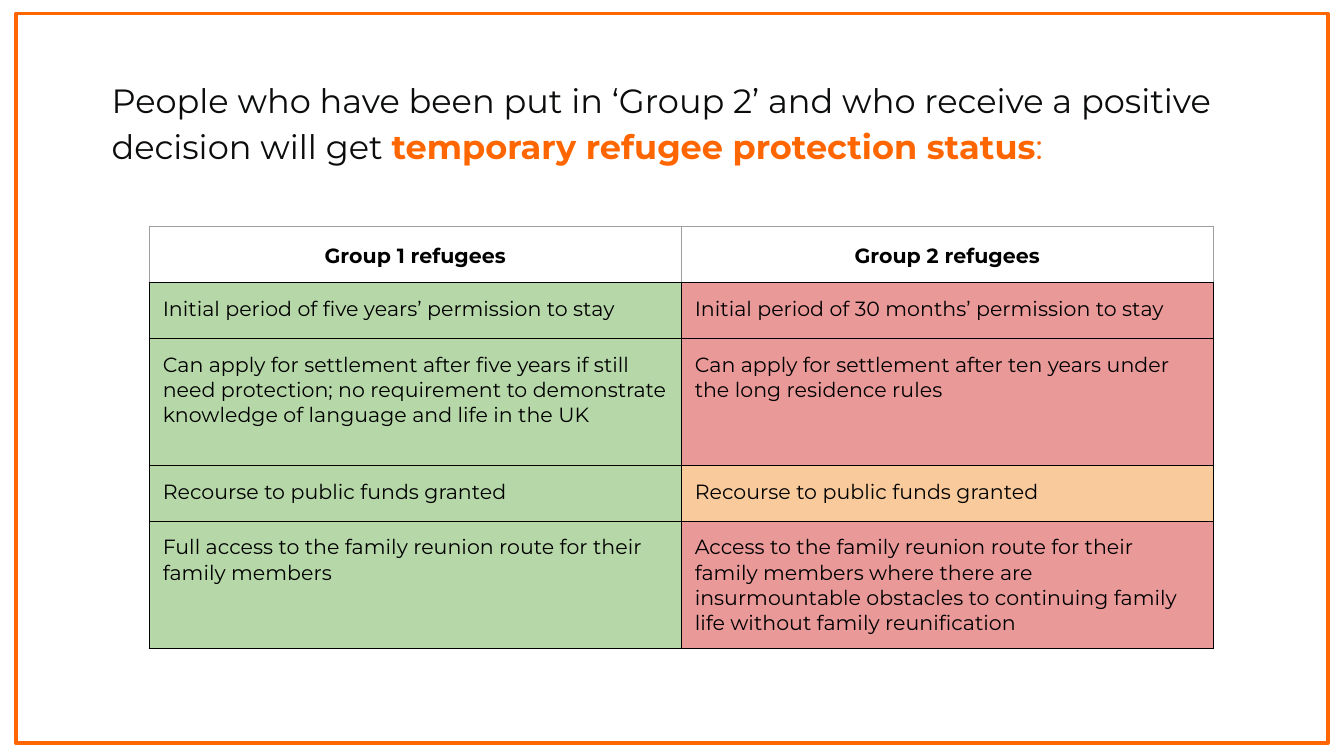
"""Build a slide comparing the entitlements of Group 1 and Group 2 refugees."""
from dataclasses import dataclass

import pptx
import pptx.dml.color
import pptx.enum.shapes
import pptx.enum.text
import pptx.oxml
import pptx.oxml.ns
import pptx.slide
import pptx.table
import pptx.text.text
import pptx.util

Pt = pptx.util.Pt
FONT = "Montserrat"
ORANGE, BLACK, GREY = "FF6600", "000000", "9E9E9E"
GREEN, RED, AMBER = "B6D7A8", "EA9999", "F9CB9C"
INSET = 7.2


@dataclass(frozen=True)
class Entitlement:
    group_1: str
    group_2: str
    height: float
    group_2_fill: str = RED


ENTITLEMENTS = [
    Entitlement("Initial period of five years’ permission to stay",
                "Initial period of 30 months’ permission to stay", 30),
    Entitlement("Can apply for settlement after five years if still need protection; "
                "no requirement to demonstrate knowledge of language and life in the UK",
                "Can apply for settlement after ten years under the long residence rules", 68),
    Entitlement("Recourse to public funds granted",
                "Recourse to public funds granted", 30, AMBER),
    Entitlement("Full access to the family reunion route for their family members",
                "Access to the family reunion route for their family members where there are "
                "insurmountable obstacles to continuing family life without family reunification",
                68),
]


def rgb(color: str) -> pptx.dml.color.RGBColor:
    return pptx.dml.color.RGBColor.from_string(color)


def format_run(r: pptx.text.text._Run, size: float, color: str, bold: bool = False) -> None:
    r.font.name = FONT
    r.font.size = Pt(size)
    r.font.bold = bold
    r.font.color.rgb = rgb(color)


def draw_frame(s: pptx.slide.Slide) -> None:
    sp = s.shapes.add_shape(pptx.enum.shapes.MSO_SHAPE.RECTANGLE,
                            Pt(8.6), Pt(7.2), Pt(702.7), Pt(391))
    sp.shadow.inherit = False
    sp.fill.background()
    sp.line.color.rgb = rgb(ORANGE)
    sp.line.width = Pt(2)


def draw_title(s: pptx.slide.Slide) -> None:
    sp = s.shapes.title
    sp.left, sp.top, sp.width, sp.height = Pt(52.6), Pt(32.4), Pt(608.4), Pt(65)
    tf = sp.text_frame
    tf.word_wrap = True
    tf.auto_size = pptx.enum.text.MSO_AUTO_SIZE.NONE
    tf.vertical_anchor = pptx.enum.text.MSO_ANCHOR.TOP
    tf.margin_left = tf.margin_right = tf.margin_top = tf.margin_bottom = Pt(INSET)
    p = tf.paragraphs[0]
    p.alignment = pptx.enum.text.PP_ALIGN.LEFT
    p.line_spacing = 1.15
    for text, color, bold in [
        ("People who have been put in ‘Group 2’ and who receive a positive decision will get ",
         "0B0C0C", False),
        ("temporary refugee protection status", ORANGE, True),
        (":", ORANGE, False),
    ]:
        r = p.add_run()
        r.text = text
        format_run(r, 18, color, bold)


def set_borders(cell: pptx.table._Cell, color: str) -> None:
    tc_pr = cell._tc.get_or_add_tcPr()
    for i, side in enumerate("LRTB"):
        line_color = BLACK if side == "B" else color
        tc_pr.insert(i, pptx.oxml.parse_xml(
            f'<a:ln{side} {pptx.oxml.ns.nsdecls("a")} w="{Pt(0.75)}"><a:solidFill>'
            f'<a:srgbClr val="{line_color}"/></a:solidFill></a:ln{side}>'))


def fill_cell(cell: pptx.table._Cell, text: str, fill: str | None = None) -> None:
    header = fill is None
    cell.margin_left = cell.margin_right = cell.margin_top = cell.margin_bottom = Pt(INSET)
    cell.text_frame.text = text
    p = cell.text_frame.paragraphs[0]
    format_run(p.runs[0], 11, BLACK, header)
    if header:
        p.alignment = pptx.enum.text.PP_ALIGN.CENTER
        p.line_spacing = 1.15
        cell.fill.background()
    else:
        cell.fill.solid()
        cell.fill.fore_color.rgb = rgb(fill)
    set_borders(cell, GREY if header else BLACK)


def draw_table(s: pptx.slide.Slide) -> None:
    heights = [30] + [e.height for e in ENTITLEMENTS]
    table = s.shapes.add_table(len(heights), 2, Pt(80), Pt(121.5),
                               Pt(570), Pt(sum(heights))).table
    table.horz_banding = table.first_row = False
    for row, height in zip(table.rows, heights):
        row.height = Pt(height)
    for col, heading in enumerate(["Group 1 refugees", "Group 2 refugees"]):
        fill_cell(table.cell(0, col), heading)
    for row, e in enumerate(ENTITLEMENTS, start=1):
        fill_cell(table.cell(row, 0), e.group_1, GREEN)
        fill_cell(table.cell(row, 1), e.group_2, e.group_2_fill)


def main() -> None:
    prs = pptx.Presentation()
    prs.slide_width, prs.slide_height = Pt(720), Pt(405)
    s = prs.slides.add_slide(prs.slide_layouts.get_by_name("Title Only"))
    draw_frame(s)
    draw_title(s)
    draw_table(s)
    prs.save("out.pptx")


if __name__ == "__main__":
    main()
